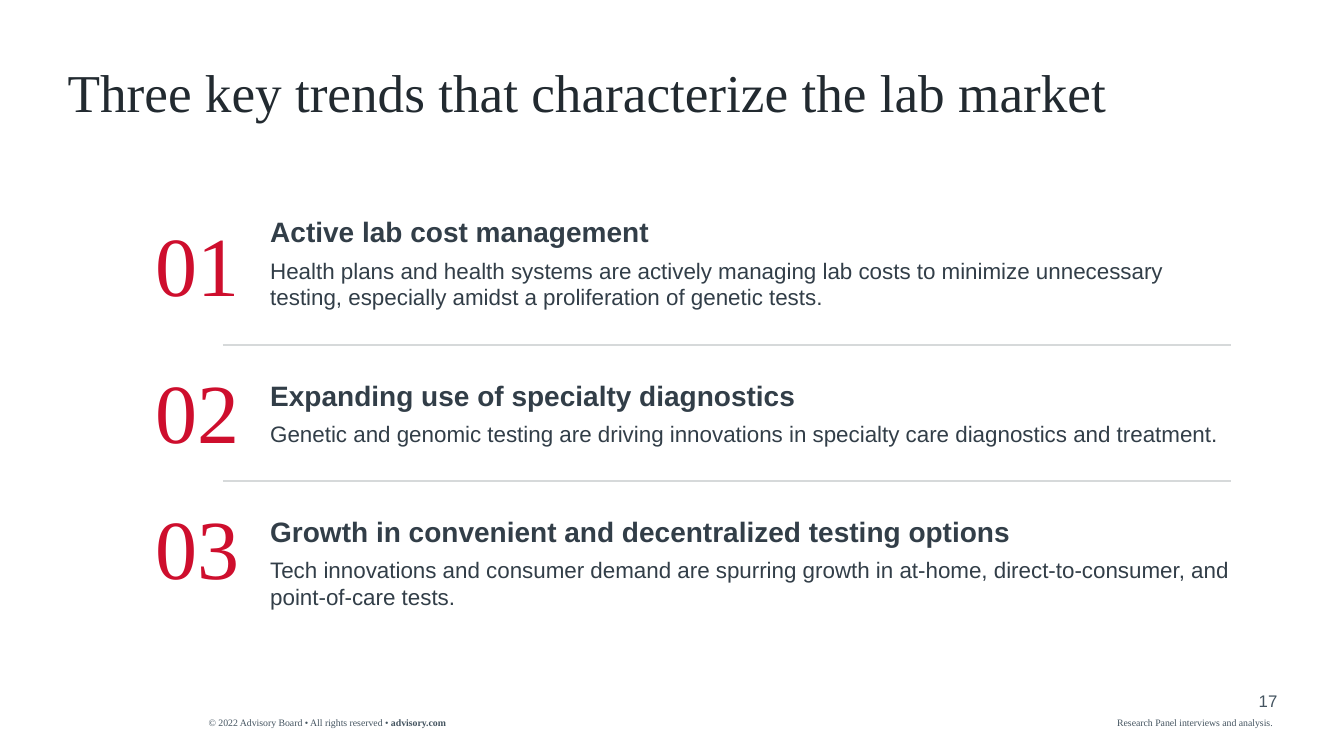
import pptx
import pptx.util
import pptx.dml.color
import pptx.enum.text
import pptx.enum.shapes
import pptx.oxml
from dataclasses import dataclass

TITLE = "Three key trends that characterize the lab market"
TRENDS = [
    ("01", "Active lab cost management",
     "Health plans and health systems are actively managing lab costs to minimize unnecessary "
     "testing, especially amidst a proliferation of genetic tests.", 213, 211, 962, 96),
    ("02", "Expanding use of specialty diagnostics",
     "Genetic and genomic testing are driving innovations in specialty care diagnostics and treatment.",
     375, 357, 962, 69),
    ("03", "Growth in convenient and decentralized testing options",
     "Tech innovations and consumer demand are spurring growth in at-home, direct-to-consumer, "
     "and point-of-care tests.", 510, 492, 973, 96),
]
RULES = [342, 477]
RIGHTS = ["© 2022 Advisory Board • All rights reserved • ", "advisory.com"]
SOURCE = "Research Panel interviews and analysis."
PAGE = "17"


@dataclass(frozen=True)
class Theme:
    serif: str = "Times New Roman"
    sans: str = "Arial"
    ink: str = "222A30"
    body: str = "323E48"
    muted: str = "445460"
    red: str = "CE0E2D"
    rule: str = "D6D9DA"
    title: int = 38
    digit: int = 60
    head: int = 20
    text: int = 16
    page: int = 12
    note: int = 7


LOOK = Theme()
ALIGN = pptx.enum.text.PP_ALIGN
ANCHOR = pptx.enum.text.MSO_ANCHOR


def px(n):
    return pptx.util.Emu(n * 9144)


def tint(code):
    return pptx.dml.color.RGBColor.from_string(code)


def style(run, face, size, color, bold=False):
    font = run.font
    font.name, font.size, font.bold = face, pptx.util.Pt(size), bold
    font.color.rgb = tint(color)


def trim(frame, anchor=ANCHOR.TOP):
    frame.margin_left = frame.margin_right = frame.margin_top = frame.margin_bottom = 0
    frame.word_wrap = True
    frame.auto_size = pptx.enum.text.MSO_AUTO_SIZE.NONE
    frame.vertical_anchor = anchor


def label(slide, box, text, face, size, color, align=ALIGN.LEFT, bold=False):
    frame = slide.shapes.add_textbox(*map(px, box)).text_frame
    trim(frame)
    line = frame.paragraphs[0]
    line.text, line.alignment = text, align
    style(line.runs[0], face, size, color, bold)
    return frame


def main():
    deck = pptx.Presentation()
    deck.slide_width, deck.slide_height = px(1333), px(750)
    slide = deck.slides.add_slide(deck.slide_layouts[5])

    title = slide.shapes.title
    title.left, title.top, title.width, title.height = map(px, (67, 64, 1200, 59))
    frame = title.text_frame
    frame.text = TITLE
    trim(frame, ANCHOR.BOTTOM)
    line = frame.paragraphs[0]
    line.alignment, line.line_spacing = ALIGN.LEFT, 0.9
    style(line.runs[0], LOOK.serif, LOOK.title, LOOK.ink)

    for digit, head, text, top, high, width, height in TRENDS:
        frame = label(slide, (268, top, width, height), head,
                      LOOK.sans, LOOK.head, LOOK.body, bold=True)
        line = frame.add_paragraph()
        line.text, line.space_before = text, pptx.util.Pt(6)
        style(line.runs[0], LOOK.sans, LOOK.text, LOOK.body)
        label(slide, (145, high, 93, 101), digit,
              LOOK.serif, LOOK.digit, LOOK.red, ALIGN.RIGHT)

    for y in RULES:
        rule = slide.shapes.add_connector(
            pptx.enum.shapes.MSO_CONNECTOR.STRAIGHT, px(221), px(y), px(1221), px(y))
        rule.line.color.rgb = tint(LOOK.rule)
        rule.line.width = pptx.util.Pt(1.5)
        rule._element.spPr.append(pptx.oxml.parse_xml(
            '<a:effectLst xmlns:a="http://schemas.openxmlformats.org/drawingml/2006/main"/>'))

    note = LOOK.serif, LOOK.note, LOOK.muted
    frame = label(slide, (207, 711, 326, 12), RIGHTS[0], *note)
    site = frame.paragraphs[0].add_run()
    site.text = RIGHTS[1]
    style(site, *note, bold=True)
    label(slide, (1108, 711, 159, 12), SOURCE, *note)
    label(slide, (1217, 685, 50, 20), PAGE, LOOK.sans, LOOK.page, LOOK.muted, ALIGN.RIGHT)

    deck.save("out.pptx")


if __name__ == "__main__":
    main()
